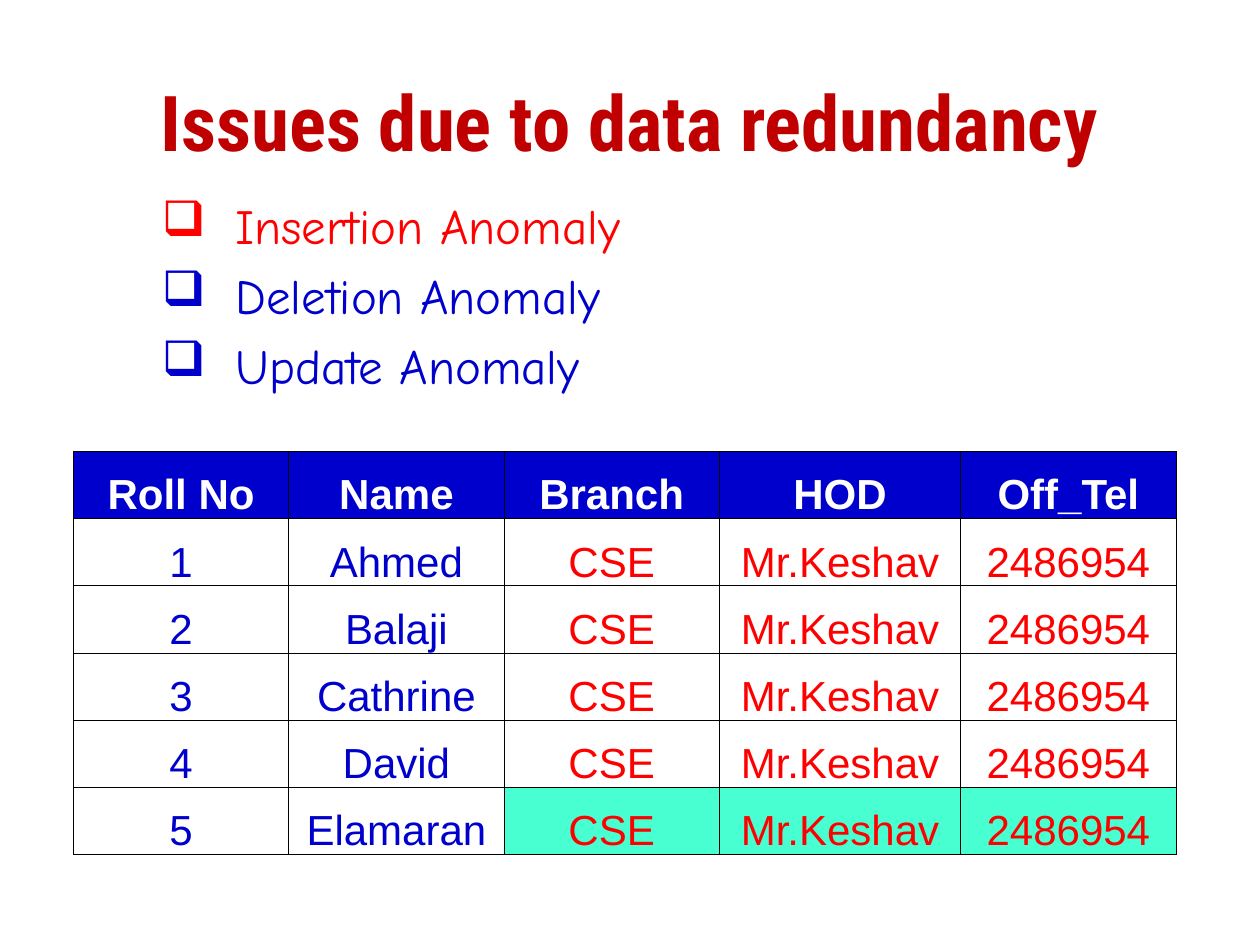
from lxml import etree
from pptx import Presentation
from pptx.dml.color import RGBColor
from pptx.enum.text import MSO_ANCHOR, PP_ALIGN
from pptx.oxml.ns import qn
from pptx.util import Pt

CENTER, LEFT = PP_ALIGN.CENTER, PP_ALIGN.LEFT
TOP, MIDDLE, BOTTOM = MSO_ANCHOR.TOP, MSO_ANCHOR.MIDDLE, MSO_ANCHOR.BOTTOM

DARK_RED, RED, BLUE = "C00000", "FF0000", "0000CC"
WHITE, BLACK, MINT = "FFFFFF", "000000", "47FFD1"


def color(hex_string):
    return RGBColor.from_string(hex_string)


class SlideBuilder:
    title_font = "Roboto Condensed"
    body_font = "Comic Neue"
    table_font = "Arial"

    def __init__(self, slide):
        self.slide = slide

    def style(self, paragraph, name, size, hex_string, bold=False, align=LEFT):
        paragraph.alignment = align
        font = paragraph.font
        font.name, font.size, font.bold = name, Pt(size), bold
        font.color.rgb = color(hex_string)

    def text_frame(self, left, top, width, height, anchor):
        shape = self.slide.shapes.add_textbox(Pt(left), Pt(top), Pt(width), Pt(height))
        frame = shape.text_frame
        frame.word_wrap = True
        frame.vertical_anchor = anchor
        return frame

    def title(self, text, *box):
        paragraph = self.text_frame(*box, MIDDLE).paragraphs[0]
        paragraph.text = text
        self.style(paragraph, self.title_font, 44, DARK_RED, True, CENTER)

    def bullets(self, items, *box):
        frame = self.text_frame(*box, TOP)
        frame.text = "\n".join(text for text, _ in items)
        for paragraph, (_, hex_string) in zip(frame.paragraphs, items):
            properties = paragraph._p.get_or_add_pPr()
            properties.set("marL", str(Pt(73.5)))
            properties.set("indent", str(Pt(-42)))
            bullet_color = etree.SubElement(properties, qn("a:buClr"))
            etree.SubElement(bullet_color, qn("a:srgbClr"), val=hex_string)
            etree.SubElement(properties, qn("a:buChar"), char="❑")
            paragraph.space_before = Pt(6.5)
            self.style(paragraph, self.body_font, 28, hex_string)

    def table(self, rows, left, top, widths, row_height):
        frame = self.slide.shapes.add_table(
            len(rows), len(widths), Pt(left), Pt(top),
            Pt(sum(widths)), Pt(row_height * len(rows)))
        table = frame.table
        table.first_row = table.horz_banding = False
        for column, width in zip(table.columns, widths):
            column.width = Pt(width)
        for row in table.rows:
            row.height = Pt(row_height)
        for r, values in enumerate(rows):
            for c, text in enumerate(values):
                header, repeated = r == 0, c >= 2
                if header:
                    fill, ink = BLUE, WHITE
                else:
                    fill = MINT if repeated and r == len(rows) - 1 else None
                    ink = RED if repeated else BLUE
                self.cell(table.cell(r, c), text, fill, ink, header)

    def cell(self, cell, text, fill, ink, bold):
        cell.text = text
        cell.vertical_anchor = BOTTOM
        cell.margin_left = cell.margin_right = cell.margin_top = Pt(0.75)
        cell.margin_bottom = 0
        self.style(cell.text_frame.paragraphs[0], self.table_font, 24, ink, bold, CENTER)
        # Borders come before the fill in the cell properties
        properties = cell._tc.get_or_add_tcPr()
        for side in ("lnL", "lnR", "lnT", "lnB"):
            line = etree.SubElement(properties, qn("a:" + side), w=str(Pt(0.5)))
            solid = etree.SubElement(line, qn("a:solidFill"))
            etree.SubElement(solid, qn("a:srgbClr"), val=BLACK)
        if fill:
            cell.fill.solid()
            cell.fill.fore_color.rgb = color(fill)
        else:
            cell.fill.background()


def main():
    presentation = Presentation()
    presentation.slide_width, presentation.slide_height = Pt(720), Pt(540)
    builder = SlideBuilder(presentation.slides.add_slide(presentation.slide_layouts[6]))

    # Heading
    builder.title("Issues due to data redundancy", 54, 24, 612, 90)

    # Kinds of anomaly
    builder.bullets([("Insertion Anomaly", RED), ("Deletion Anomaly", BLUE),
                     ("Update Anomaly", BLUE)], 54, 108, 612, 324)

    # Student table with the same department details in every row
    names = ["Ahmed", "Balaji", "Cathrine", "David", "Elamaran"]
    rows = [["Roll No", "Name", "Branch", "HOD", "Off_Tel"]]
    rows += [[str(number), name, "CSE", "Mr.Keshav", "2486954"]
             for number, name in enumerate(names, 1)]
    builder.table(rows, 42, 258, [123, 123, 123, 138, 123], 38.4)

    presentation.save("out.pptx")


if __name__ == "__main__":
    main()
